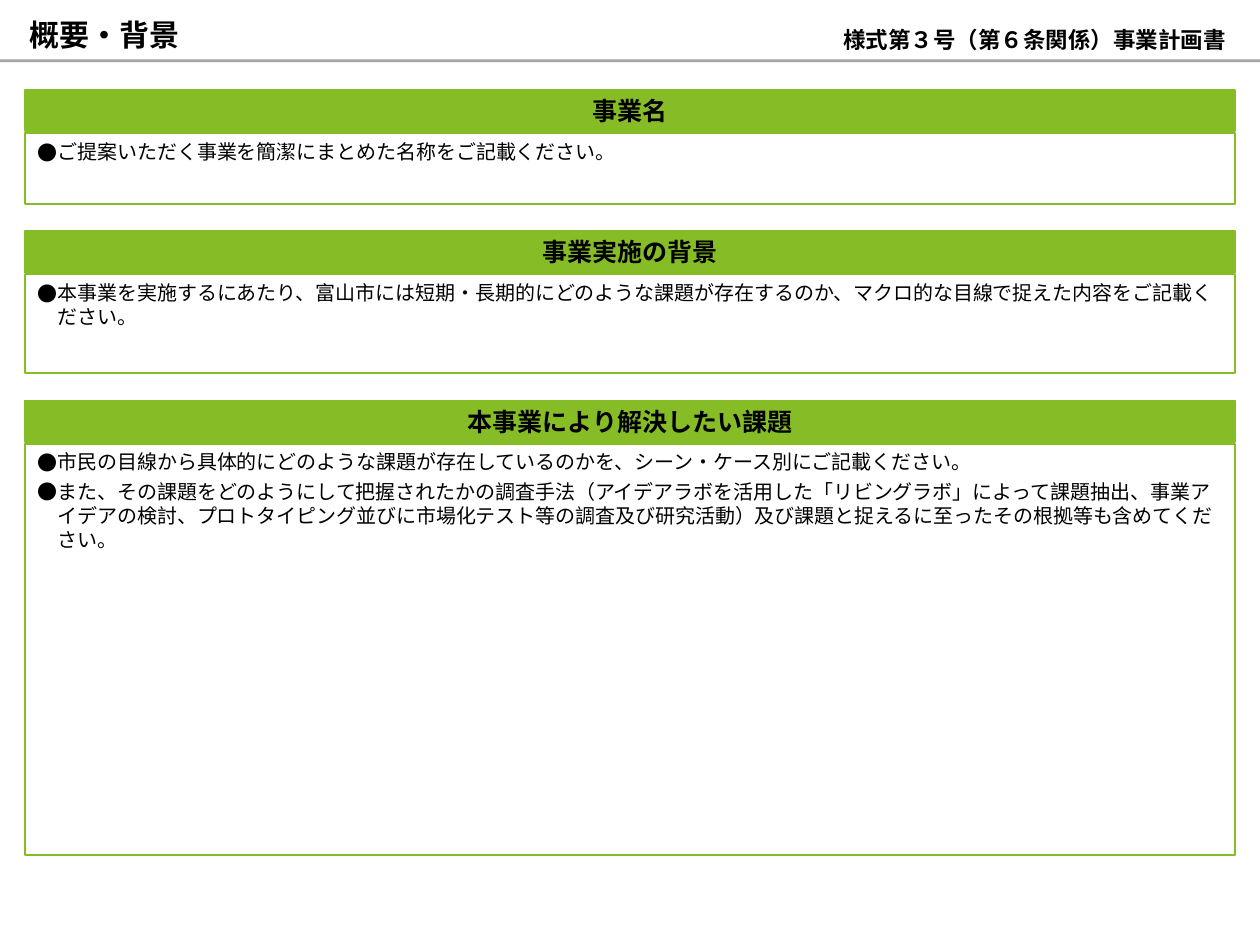
from lxml.etree import SubElement
from pptx import Presentation
from pptx.dml.color import RGBColor
from pptx.enum.shapes import MSO_SHAPE
from pptx.enum.text import MSO_ANCHOR, PP_ALIGN
from pptx.oxml.ns import qn
from pptx.util import Inches, Pt

COLORS = {"ink": "000000", "paper": "FFFFFF", "green": "86BC25", "rule": "A5A5A5"}
FONT = "Noto Sans CJK JP"
SLIDE_W, SLIDE_H = 14, 10.5
MARGIN = 0.02 * SLIDE_W
PANEL_W = SLIDE_W - 2 * MARGIN
HEADING_H, HEADING_STEP, SECTION_GAP = 0.46, 0.48, 0.3

SECTIONS = [
    ("事業名", 0.79, ["ご提案いただく事業を簡潔にまとめた名称をご記載ください。"]),
    ("事業実施の背景", 1.1, [
        "本事業を実施するにあたり、富山市には短期・長期的にどのような課題が存在するのか、"
        "マクロ的な目線で捉えた内容をご記載ください。"]),
    ("本事業により解決したい課題", 4.57, [
        "市民の目線から具体的にどのような課題が存在しているのかを、"
        "シーン・ケース別にご記載ください。",
        "また、その課題をどのようにして把握されたかの調査手法（アイデアラボを活用した"
        "「リビングラボ」によって課題抽出、事業アイデアの検討、プロトタイピング並びに"
        "市場化テスト等の調査及び研究活動）及び課題と捉えるに至ったその根拠等も含めてください。"]),
]


def write(shape, lines, size, bold, align, anchor, inset=(0, 0), wrap=True):
    """Fill a shape with formatted paragraphs; inset is (sides, top and bottom)."""
    frame = shape.text_frame
    frame.text = "\n".join(lines)
    frame.word_wrap = wrap
    frame.vertical_anchor = anchor
    frame.margin_left = frame.margin_right = Inches(inset[0])
    frame.margin_top = frame.margin_bottom = Inches(inset[1])
    for paragraph in frame.paragraphs:
        paragraph.alignment = align
        for run in paragraph.runs:
            run.font.name, run.font.size, run.font.bold = FONT, Pt(size), bold
            run.font.color.rgb = RGBColor.from_string(COLORS["ink"])
            SubElement(run.font._element, qn("a:ea"), typeface=FONT)


def add_box(shapes, left, top, width, height, fill, line=None):
    box = shapes.add_shape(MSO_SHAPE.RECTANGLE, Inches(left), Inches(top),
                           Inches(width), Inches(height))
    box.shadow.inherit = False
    box.fill.solid()
    box.fill.fore_color.rgb = RGBColor.from_string(COLORS[fill])
    if line:
        box.line.color.rgb = RGBColor.from_string(COLORS[line])
        box.line.width = Pt(1.5)
    else:
        box.line.fill.background()
    return box


presentation = Presentation()
presentation.slide_width, presentation.slide_height = Inches(SLIDE_W), Inches(SLIDE_H)
slide = presentation.slides.add_slide(presentation.slide_layouts[5])

# Header
title = slide.shapes.title
title.left, title.top = Inches(0.33), Inches(0.21)
title.width, title.height = Inches(6.87), Inches(0.37)
write(title, ["概要・背景"], 24, True, PP_ALIGN.LEFT, MSO_ANCHOR.BOTTOM)
add_box(slide.shapes, 0, 0.66, SLIDE_W, 0.03, "rule")
form_name = slide.shapes.add_textbox(Inches(9.19), Inches(0.35), Inches(4.61), Inches(0.24))
write(form_name, ["様式第３号（第６条関係）事業計画書"], 18, True,
      PP_ALIGN.CENTER, MSO_ANCHOR.BOTTOM)

# Sections, stacked with equal gaps
top = 1
for heading_text, body_h, items in SECTIONS:
    section = slide.shapes.add_group_shape().shapes
    heading = add_box(section, MARGIN, top, PANEL_W, HEADING_H, "green", "green")
    write(heading, [heading_text], 20, True, PP_ALIGN.CENTER, MSO_ANCHOR.MIDDLE,
          (0.14, 0.07), wrap=False)
    body = add_box(section, MARGIN, top + HEADING_STEP, PANEL_W, body_h, "paper", "green")
    write(body, items, 16, False, PP_ALIGN.LEFT, MSO_ANCHOR.TOP, (0.14, 0.07))
    for index, paragraph in enumerate(body.text_frame.paragraphs):
        paragraph.line_spacing = Pt(19.2)
        if index:
            paragraph.space_before = Pt(4.3)
        properties = paragraph._p.get_or_add_pPr()
        properties.set("marL", str(Inches(0.22)))
        properties.set("indent", str(-Inches(0.22)))
        SubElement(properties, qn("a:buFont"), typeface=FONT)
        SubElement(properties, qn("a:buChar"), char="●")
    top += HEADING_STEP + body_h + SECTION_GAP

presentation.save("out.pptx")
